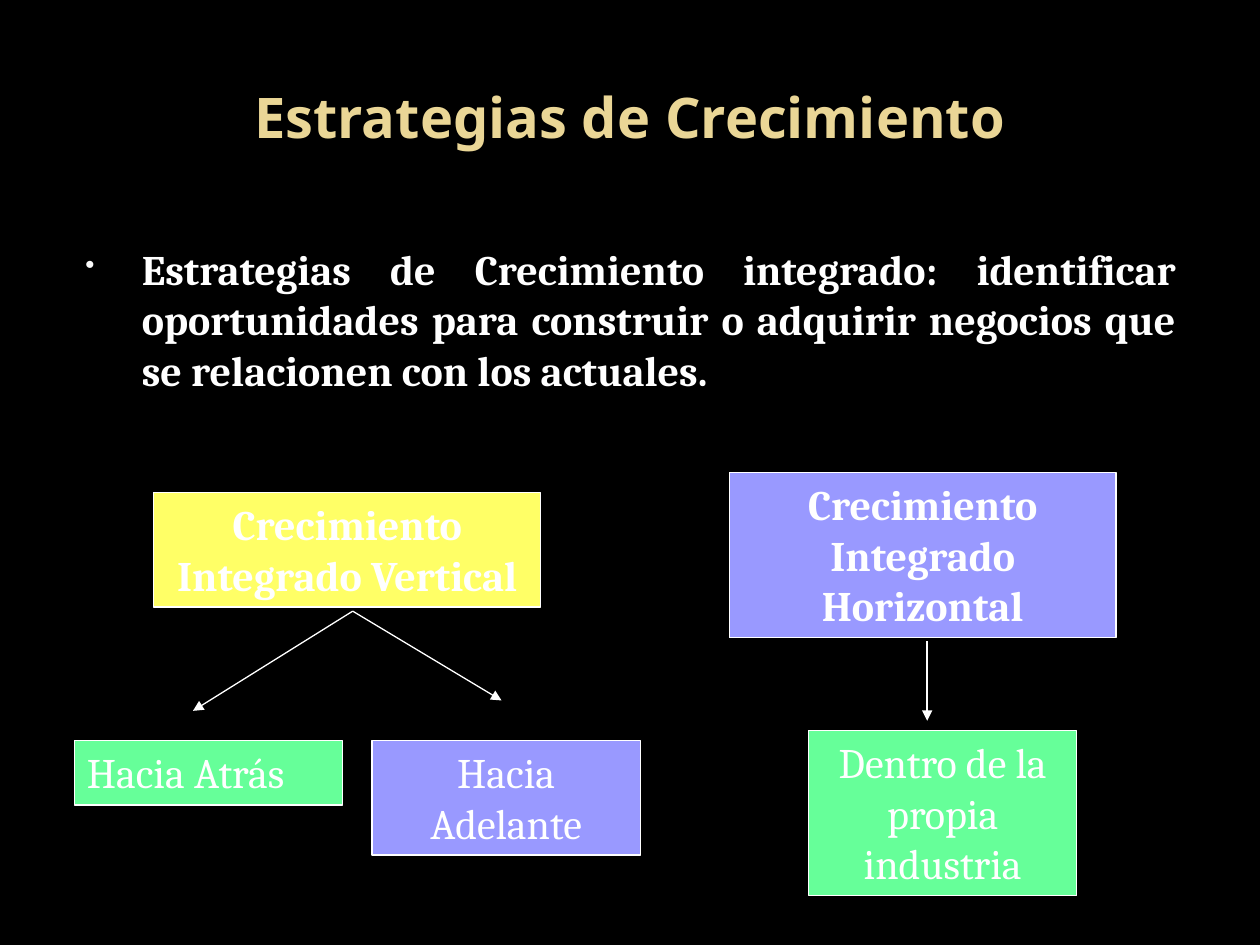
"""Build the slide on integrated growth strategies."""
import pptx
import pptx.dml.color
import pptx.enum.shapes
import pptx.enum.text
import pptx.oxml.ns
import pptx.util
from lxml import etree

Cm = pptx.util.Cm
Pt = pptx.util.Pt
ALIGN = pptx.enum.text.PP_ALIGN
ANCHOR = pptx.enum.text.MSO_ANCHOR
COLORS = {
    "black": "000000", "white": "FFFFFF", "gold": "EAD696", "bullet": "F9F9F9",
    "yellow": "FFFF66", "violet": "9999FF", "green": "66FF99",
}


def rgb(name):
    return pptx.dml.color.RGBColor.from_string(COLORS[name])


def sub(parent, tag, **attrs):
    return etree.SubElement(parent, pptx.oxml.ns.qn(tag), attrs)


def write(tf, text, font="Cambria", size=24, color="white", bold=False,
          align=ALIGN.CENTER, anchor=ANCHOR.TOP):
    tf.word_wrap = True
    tf.vertical_anchor = anchor
    p = tf.paragraphs[0]
    p.alignment = align
    r = p.add_run()
    r.text = text
    r.font.name, r.font.size, r.font.bold = font, Pt(size), bold
    r.font.color.rgb = rgb(color)
    return p


def add_text(s, text, left, top, width, height, **fmt):
    sp = s.shapes.add_textbox(Cm(left), Cm(top), Cm(width), Cm(height))
    return write(sp.text_frame, text, **fmt)


def add_bullet(p, indent, hanging):
    pPr = p._p.get_or_add_pPr()
    pPr.set("marL", str(Cm(indent)))
    pPr.set("indent", str(-Cm(hanging)))
    sub(sub(pPr, "a:buClr"), "a:srgbClr", val=COLORS["bullet"])
    sub(pPr, "a:buSzPct", val="65000")
    sub(pPr, "a:buChar", char="•")


def add_box(s, text, left, top, width, height, fill, **fmt):
    sp = s.shapes.add_shape(pptx.enum.shapes.MSO_SHAPE.RECTANGLE,
                            Cm(left), Cm(top), Cm(width), Cm(height))
    sp.shadow.inherit = False
    sp.fill.solid()
    sp.fill.fore_color.rgb = rgb(fill)
    sp.line.color.rgb = rgb("white")
    sp.line.width = Pt(0.75)
    write(sp.text_frame, text, **fmt)
    sp.text_frame.auto_size = pptx.enum.text.MSO_AUTO_SIZE.SHAPE_TO_FIT_TEXT


def add_arrow(s, x1, y1, x2, y2):
    cn = s.shapes.add_connector(pptx.enum.shapes.MSO_CONNECTOR.STRAIGHT,
                                Cm(x1), Cm(y1), Cm(x2), Cm(y2))
    cn.line.color.rgb = rgb("white")
    cn.line.width = Pt(0.75)
    sub(cn.line._get_or_add_ln(), "a:tailEnd", type="triangle")
    sub(cn._element.spPr, "a:effectLst")


def main():
    prs = pptx.Presentation()
    prs.slide_width, prs.slide_height = Cm(25.4), Cm(19.05)
    s = prs.slides.add_slide(prs.slide_layouts[6])
    s.background.fill.solid()
    s.background.fill.fore_color.rgb = rgb("black")

    add_text(s, "Estrategias de Crecimiento", 1.27, 0.76, 22.86, 3.18,
             font="Noto Sans", size=32, color="gold", bold=True,
             anchor=ANCHOR.MIDDLE)
    p = add_text(s, "Estrategias de Crecimiento integrado: identificar "
                 "oportunidades para construir o adquirir negocios que se "
                 "relacionen con los actuales.", 1.09, 4.78, 22.86, 12.24,
                 bold=True, align=ALIGN.JUSTIFY)
    add_bullet(p, 1.52, 1.14)

    strategy_w, option_w = 7.8, 5.41
    one_line, two_lines, three_lines = 1.3, 2.31, 3.33
    add_box(s, "Crecimiento Integrado Vertical", 3.1, 9.93, strategy_w,
            two_lines, "yellow", bold=True)
    add_box(s, "Crecimiento Integrado Horizontal", 14.7, 9.53, strategy_w,
            three_lines, "violet", bold=True)
    add_box(s, "Hacia Atrás", 1.5, 14.93, option_w, one_line, "green",
            align=ALIGN.LEFT)
    add_box(s, "Hacia Adelante", 7.5, 14.93, option_w, two_lines, "violet")
    add_box(s, "Dentro de la propia industria", 16.3, 14.73, option_w,
            three_lines, "green")

    fork_x, fork_y = 7.11, 12.32
    for x, y in ((3.89, 14.33), (10.11, 14.12)):
        add_arrow(s, fork_x, fork_y, x, y)
    add_arrow(s, 18.69, 12.93, 18.69, 14.53)

    prs.save("out.pptx")


if __name__ == "__main__":
    main()
